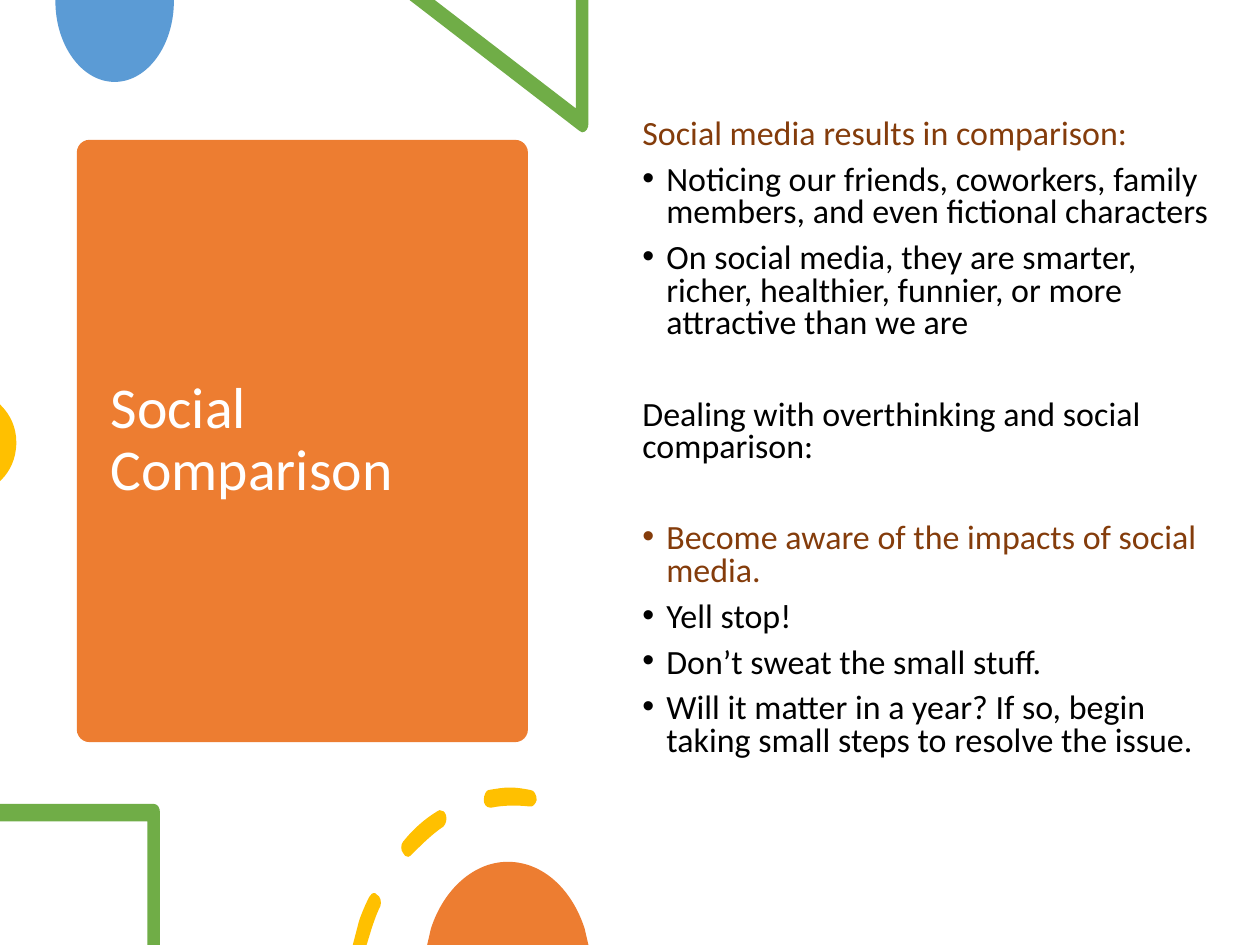
import pptx
import pptx.dml.color
import pptx.enum.shapes
import pptx.enum.text
import pptx.oxml.ns
import pptx.util
from lxml import etree
from pptx.util import Inches

BLUE, GREEN, GOLD, ORANGE = "5B9BD5", "70AD47", "FFC000", "ED7D31"
BROWN, BLACK, WHITE = "843C0B", "000000", "FFFFFF"


def colour(hex_string):
    return pptx.dml.color.RGBColor.from_string(hex_string)


def add_element(parent, tag, **attributes):
    element = etree.SubElement(parent, pptx.oxml.ns.qn(tag))
    for key, value in attributes.items():
        element.set(key, str(value))
    return element


def end_points(contour):
    return [tuple(map(Inches, segment[-2:])) for segment in contour]


def bend(outline, contours):
    """Turn the straight segments into cubic curves where six numbers are given."""
    segments = [segment for contour in contours for segment in contour[1:]]
    for line, segment in zip(outline._element.xpath(".//a:lnTo"), segments):
        if len(segment) == 2:
            continue
        curve = etree.Element(pptx.oxml.ns.qn("a:cubicBezTo"))
        for x, y in zip(segment[::2], segment[1::2]):
            add_element(curve, "a:pt", x=Inches(x) - outline.left,
                        y=Inches(y) - outline.top)
        line.getparent().replace(line, curve)


class SlideWriter:
    font = "Calibri"
    indent = Inches(0.19)

    def __init__(self, slide):
        self.slide = slide

    def _paint(self, shape, fill):
        shape.shadow.inherit = False
        shape.fill.solid()
        shape.fill.fore_color.rgb = colour(fill)
        shape.line.fill.background()

    def rounded_panel(self, box, fill, rounding):
        panel = self.slide.shapes.add_shape(
            pptx.enum.shapes.MSO_SHAPE.ROUNDED_RECTANGLE, *map(Inches, box))
        panel.adjustments[0] = rounding
        self._paint(panel, fill)

    def outline(self, fill, *contours):
        """Draw contours of points (x, y) and curves (two controls, then the end)."""
        first, *others = map(end_points, contours)
        builder = self.slide.shapes.build_freeform(*first[0])
        builder.add_line_segments(first[1:], close=True)
        for points in others:
            builder.move_to(*points[0])
            builder.add_line_segments(points[1:], close=True)
        outline = builder.convert_to_shape()
        bend(outline, contours)
        self._paint(outline, fill)

    def text_frame(self, box, anchor):
        frame = self.slide.shapes.add_textbox(*map(Inches, box)).text_frame
        frame.word_wrap = True
        frame.vertical_anchor = anchor
        return frame

    def paragraph(self, frame, text, size, hex_string, bullet=False, **spacing):
        last = frame.paragraphs[-1]
        paragraph = frame.add_paragraph() if last.runs else last
        for name, value in spacing.items():
            setattr(paragraph, name, value)
        run = paragraph.add_run()
        run.text = text
        for name, value in {"name": self.font, "size": pptx.util.Pt(size)}.items():
            setattr(run.font, name, value)
        run.font.color.rgb = colour(hex_string)
        if bullet:
            properties = paragraph._p.get_or_add_pPr()
            properties.set("marL", str(self.indent))
            properties.set("indent", str(-self.indent))
            add_element(properties, "a:buFont", typeface="Arial")
            add_element(properties, "a:buChar", char="•")


def draw_decorations(writer):
    writer.outline(BLUE, [
        (1.38, 0), (0.44, 0), (0.44, 0.01),
        (0.44, 0.36, 0.65, 0.65, 0.91, 0.65),
        (1.17, 0.65, 1.38, 0.36, 1.38, 0.01)])
    writer.outline(GREEN, [
        (4.67, 0), (4.57, 0), (4.57, 0.86), (3.45, 0), (3.25, 0), (4.6, 1.04),
        (4.61, 1.05, 4.61, 1.05, 4.62, 1.05),
        (4.65, 1.05, 4.67, 1.02, 4.67, 0.98)])
    writer.outline(GOLD, [
        (0, 3.21), (0, 3.82), (0.01, 3.81),
        (0.08, 3.74, 0.13, 3.64, 0.13, 3.51),
        (0.13, 3.39, 0.08, 3.29, 0.01, 3.22)])


def draw_lower_decorations(writer):
    writer.outline(GREEN, [
        (1.22, 6.38), (0, 6.38), (0, 6.52), (1.17, 6.52), (1.17, 7.5),
        (1.27, 7.5), (1.27, 6.45), (1.27, 6.41, 1.25, 6.38, 1.22, 6.38)])
    lower_dash = [
        (2.98, 7.09), (2.96, 7.08, 2.94, 7.1, 2.93, 7.12),
        (2.9, 7.18, 2.87, 7.25, 2.85, 7.31), (2.8, 7.5), (2.91, 7.5),
        (2.95, 7.37), (2.97, 7.31, 2.99, 7.25, 3.02, 7.19),
        (3.03, 7.16, 3.02, 7.11, 2.99, 7.1)]
    middle_dash = [
        (3.49, 6.43), (3.48, 6.43, 3.48, 6.43, 3.47, 6.44),
        (3.37, 6.5, 3.28, 6.58, 3.2, 6.68),
        (3.18, 6.7, 3.18, 6.75, 3.2, 6.77),
        (3.21, 6.79, 3.22, 6.8, 3.24, 6.8),
        (3.25, 6.8, 3.26, 6.79, 3.27, 6.78),
        (3.35, 6.7, 3.43, 6.62, 3.52, 6.56),
        (3.54, 6.54, 3.55, 6.5, 3.54, 6.47),
        (3.53, 6.44, 3.51, 6.43, 3.49, 6.43)]
    upper_dash = [
        (4.05, 6.25), (3.99, 6.25, 3.94, 6.26, 3.88, 6.27),
        (3.86, 6.27, 3.84, 6.31, 3.84, 6.35),
        (3.84, 6.38, 3.86, 6.41, 3.89, 6.41), (3.9, 6.41),
        (4, 6.39, 4.1, 6.39, 4.2, 6.4),
        (4.23, 6.41, 4.25, 6.38, 4.26, 6.35),
        (4.26, 6.31, 4.24, 6.27, 4.21, 6.27),
        (4.16, 6.26, 4.1, 6.25, 4.05, 6.25)]
    writer.outline(GOLD, lower_dash, middle_dash, upper_dash)
    writer.outline(ORANGE, [
        (4.03, 6.84), (3.76, 6.84, 3.52, 7.06, 3.42, 7.37), (3.39, 7.5),
        (4.67, 7.5), (4.64, 7.37), (4.54, 7.06, 4.31, 6.84, 4.03, 6.84)])


def write_title(writer):
    title = writer.text_frame((0.78, 1.22, 3.23, 4.56),
                              pptx.enum.text.MSO_ANCHOR.MIDDLE)
    writer.paragraph(title, "Social Comparison", 33, WHITE, line_spacing=0.9)


def write_advice(writer):
    advice = writer.text_frame((5, 0.9, 4.72, 5.35),
                               pptx.enum.text.MSO_ANCHOR.TOP)
    normal, section = 7.5, 33.5
    for text, hex_string, bullet, gap in (
        ("Social media results in comparison:", BROWN, False, normal),
        ("Noticing our friends, coworkers, family members, and even fictional "
         "characters", BLACK, True, normal),
        ("On social media, they are smarter, richer, healthier, funnier, or more "
         "attractive than we are", BLACK, True, normal),
        ("Dealing with overthinking and social comparison:", BLACK, False, section),
        ("Become aware of the impacts of social media.", BROWN, True, section),
        ("Yell stop!", BLACK, True, normal),
        ("Don’t sweat the small stuff.", BLACK, True, normal),
        ("Will it matter in a year? If so, begin taking small steps to resolve "
         "the issue.", BLACK, True, normal),
    ):
        writer.paragraph(advice, text, 19.4, hex_string, bullet,
                         line_spacing=0.8, space_before=pptx.util.Pt(gap))


def main():
    deck = pptx.Presentation()
    deck.slide_width, deck.slide_height = Inches(10), Inches(7.5)
    writer = SlideWriter(deck.slides.add_slide(deck.slide_layouts[6]))
    writer.rounded_panel((0.61, 1.11, 3.58, 4.78), ORANGE, 0.028)
    write_title(writer)
    draw_decorations(writer)
    write_advice(writer)
    draw_lower_decorations(writer)
    deck.save("out.pptx")


if __name__ == "__main__":
    main()
